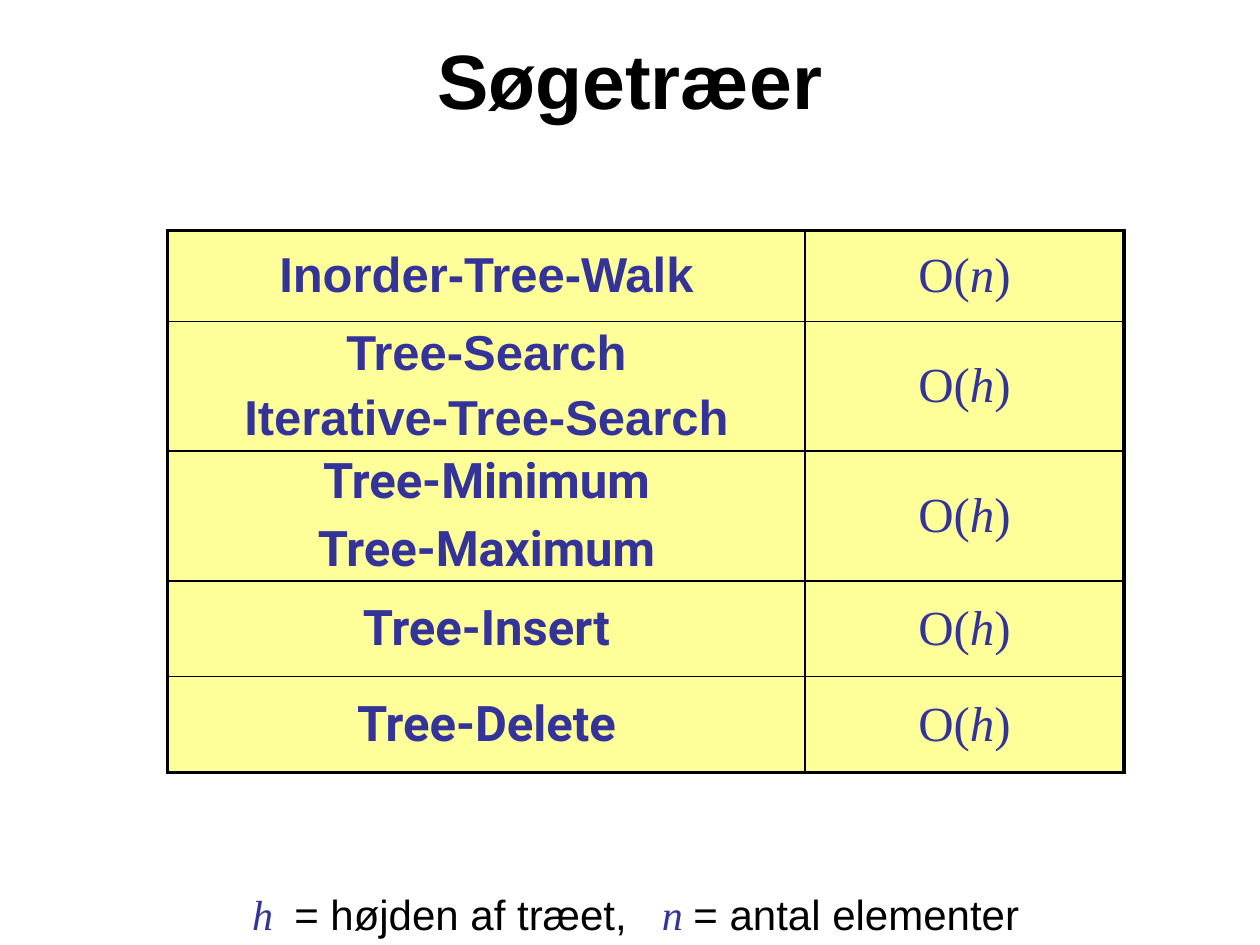
import pptx
import pptx.dml.color
import pptx.enum.text
import pptx.oxml
import pptx.oxml.ns
import pptx.util
from pptx.util import Inches

SANS, ROBOTO, SERIF = "Arial", "Roboto", "Times New Roman"
BLACK, INDIGO, YELLOW = "000000", "333399", "FFFF99"
ANCHOR = pptx.enum.text.MSO_ANCHOR
CENTER = pptx.enum.text.PP_ALIGN.CENTER

OPERATIONS = [
    # names, font, variable in the bound, row height
    (["Inorder-Tree-Walk"], SANS, "n", 0.72),
    (["Tree-Search", "Iterative-Tree-Search"], SANS, "h", 1.03),
    (["Tree-Minimum", "Tree-Maximum"], ROBOTO, "h", 1.03),
    (["Tree-Insert"], ROBOTO, "h", 0.76),
    (["Tree-Delete"], ROBOTO, "h", 0.76),
]


def rgb(code):
    return pptx.dml.color.RGBColor.from_string(code)


def run_format(size, name=SANS, color=BLACK, bold=False, italic=False):
    return dict(size=pptx.util.Pt(size), name=name, color=color, bold=bold, italic=italic)


def add_run(paragraph, text, style):
    font = paragraph.add_run().font
    paragraph.runs[-1].text = text
    for key, value in style.items():
        if key == "color":
            font.color.rgb = rgb(value)
        else:
            setattr(font, key, value)


def space_before(paragraph, percent):
    """Set spacing relative to the text size."""
    properties = paragraph._p.get_or_add_pPr()
    spacing = pptx.oxml.parse_xml(
        f'<a:spcBef {pptx.oxml.ns.nsdecls("a")}><a:spcPct val="{percent * 1000}"/></a:spcBef>')
    properties.insert(0, spacing)


def fill_text(frame, lines, percent=None):
    """Write centred lines, each a list of (text, format) runs."""
    for index, line in enumerate(lines):
        paragraph = frame.add_paragraph() if index else frame.paragraphs[0]
        paragraph.alignment = CENTER
        if percent:
            space_before(paragraph, percent)
        for text, style in line:
            add_run(paragraph, text, style)


def set_borders(cell, widths):
    """Draw black borders; widths are in the order left, right, top, bottom."""
    properties = cell._tc.get_or_add_tcPr()
    for index, (side, width) in enumerate(zip("LRTB", widths)):
        border = pptx.oxml.parse_xml(
            f'<a:ln{side} {pptx.oxml.ns.nsdecls("a")} w="{int(pptx.util.Pt(width))}">'
            f'<a:solidFill><a:srgbClr val="{BLACK}"/></a:solidFill></a:ln{side}>')
        properties.insert(index, border)


class SlideBuilder:
    def __init__(self, deck):
        self.slide = deck.slides.add_slide(deck.slide_layouts[5])
        self.title_style = run_format(44, bold=True)
        self.bound_style = run_format(28, SERIF, INDIGO)
        self.cell_format = dict(
            vertical_anchor=ANCHOR.MIDDLE, margin_left=Inches(0.1),
            margin_right=Inches(0.1), margin_top=0, margin_bottom=0)

    def title(self, text, left, top, width, height):
        title = self.slide.shapes.title
        title.left, title.top, title.width, title.height = left, top, width, height
        title.text_frame.vertical_anchor = ANCHOR.MIDDLE
        fill_text(title.text_frame, [[(text, self.title_style)]])

    def cell(self, cell, lines, widths):
        for key, value in self.cell_format.items():
            setattr(cell, key, value)
        cell.fill.solid()
        cell.fill.fore_color.rgb = rgb(YELLOW)
        set_borders(cell, widths)
        fill_text(cell.text_frame, lines, 20)

    def running_times(self, operations, left, top, column_widths):
        total_height = sum(operation[-1] for operation in operations)
        table = self.slide.shapes.add_table(
            len(operations), 2, left, top, sum(column_widths), Inches(total_height)).table
        table.first_row = table.horz_banding = False
        for column, width in zip(table.columns, column_widths):
            column.width = width
        last = len(operations) - 1
        inner, outer = 1, 2.25
        upright, italic = self.bound_style, {**self.bound_style, "italic": True}
        for index, (names, font, variable, height) in enumerate(operations):
            table.rows[index].height = Inches(height)
            above = outer if index == 0 else inner
            below = outer if index == last else inner
            name_style = run_format(28, font, INDIGO, bold=True)
            self.cell(table.cell(index, 0), [[(name, name_style)] for name in names],
                      (outer, inner, above, below))
            bound = [("O(", upright), (variable, italic), (")", upright)]
            self.cell(table.cell(index, 1), [bound], (inner, outer, above, below))

    def legend(self, runs, left, top, width, height):
        frame = self.slide.shapes.add_textbox(left, top, width, height).text_frame
        frame.word_wrap = True
        frame.auto_size = pptx.enum.text.MSO_AUTO_SIZE.SHAPE_TO_FIT_TEXT
        fill_text(frame, [runs], 50)


def main():
    deck = pptx.Presentation()
    deck.slide_width, deck.slide_height = Inches(10), Inches(7.5)
    builder = SlideBuilder(deck)
    builder.title("Søgetræer", Inches(0.5), 0, Inches(9), Inches(1.25))
    builder.running_times(OPERATIONS, Inches(1.33), Inches(1.83), [Inches(5.06), Inches(2.53)])
    symbol = run_format(24, SERIF, INDIGO, italic=True)
    meaning = run_format(24)
    builder.legend(
        [("h  ", symbol), ("= højden af træet,   ", meaning),
         ("n ", symbol), ("= antal elementer", meaning)],
        Inches(0.42), Inches(7), Inches(9.25), Inches(0.5))
    deck.save("out.pptx")


if __name__ == "__main__":
    main()
